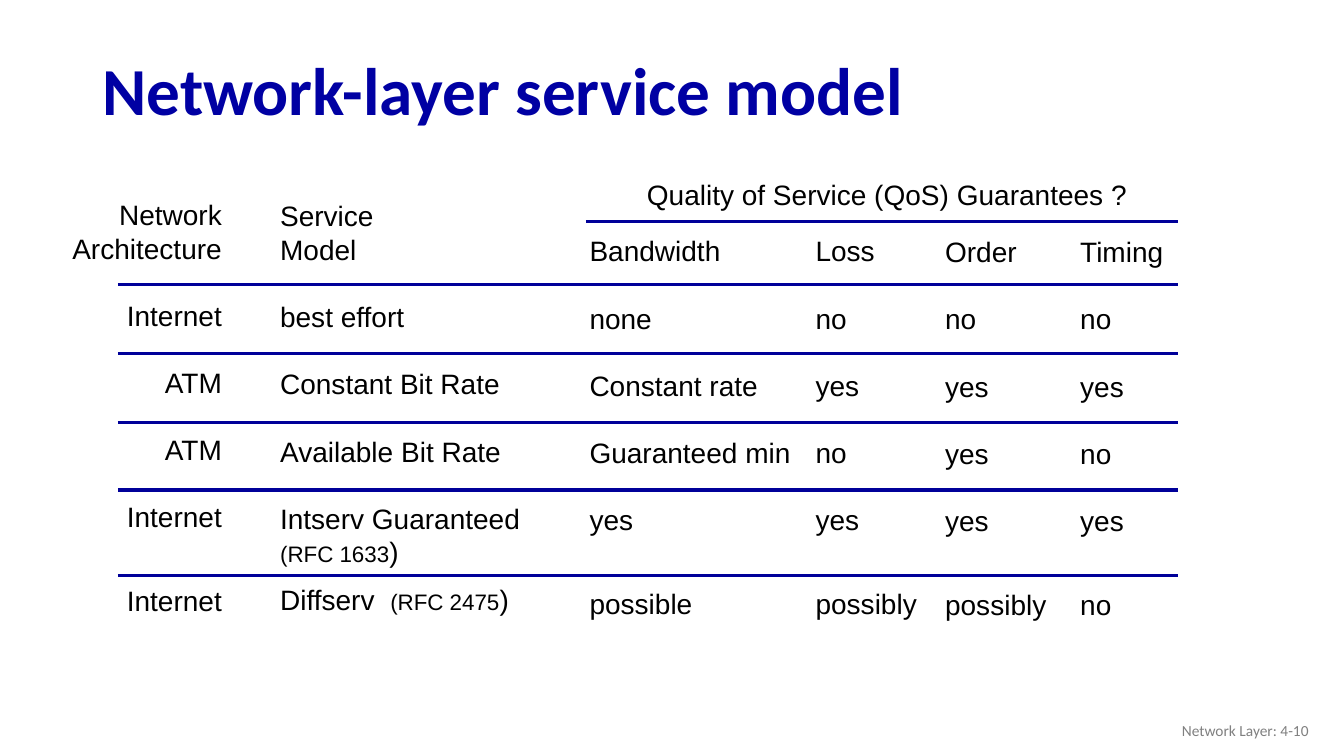
from pptx import Presentation
from pptx.dml.color import RGBColor
from pptx.enum.shapes import MSO_CONNECTOR
from pptx.enum.text import MSO_ANCHOR, PP_ALIGN
from pptx.util import Pt
from lxml.etree import SubElement
from pptx.oxml.ns import qn

COLORS = {"title": "0000A3", "rule": "000099", "text": "000000", "footer": "808080"}

deck = Presentation()
deck.slide_width, deck.slide_height = Pt(960), Pt(540)
slide = deck.slides.add_slide(deck.slide_layouts[5])


def style(paragraph, font_name, size, color, align=PP_ALIGN.LEFT):
    paragraph.alignment = align
    paragraph.font.name = font_name
    if size:
        paragraph.font.size = Pt(size)
    paragraph.font.color.rgb = RGBColor.from_string(COLORS[color])


def add_column(left, top, width, height, lines, gaps, align=PP_ALIGN.LEFT):
    """Stack lines at a 24 pt pitch; "|" splits off runs, RFC runs are smaller."""
    frame = slide.shapes.add_textbox(Pt(left), Pt(top), Pt(width), Pt(height)).text_frame
    frame.word_wrap = True
    for index, (line, gap) in enumerate(zip(lines, gaps)):
        paragraph = frame.paragraphs[0] if index == 0 else frame.add_paragraph()
        pieces = line.split("|")
        style(paragraph, "Arial", 20 if len(pieces) == 1 else None, "text", align)
        paragraph.line_spacing = Pt(24)
        paragraph.space_before = Pt(gap)
        for piece in pieces:
            run = paragraph.add_run()
            run.text = piece
            if len(pieces) > 1:
                run.font.size = Pt(16 if piece.startswith("(RFC") else 20)


# Title
title = slide.shapes.title
title.left, title.top, title.width, title.height = Pt(66), Pt(31.5), Pt(828), Pt(70.5)
title.text_frame.text = "Network-layer service model"
title.text_frame.vertical_anchor = MSO_ANCHOR.MIDDLE
heading = title.text_frame.paragraphs[0]
style(heading, "Calibri", 48, "title")
heading.font.bold = True
heading.line_spacing = 0.9

# Architecture and service model columns, with two-line headings
add_column(39.6, 137.5, 126, 310,
           ["Network", "Architecture", "Internet", "ATM", "ATM", "Internet", "Internet"],
           [0, 0, 24, 24, 24, 24, 36], PP_ALIGN.RIGHT)
add_column(193, 138.5, 208, 308,
           ["Service", "Model", "best effort", "Constant Bit Rate", "Available Bit Rate",
            "Intserv Guaranteed", "(RFC 1633|)", "Diffserv  |(RFC 2475|)"],
           [0, 0, 24, 24, 24, 24, 0, 10])

# Guarantee columns
guarantees = [
    (414, 163.5, 168, ["Bandwidth", "none", "Constant rate", "Guaranteed min", "yes", "possible"]),
    (575.5, 163.5, 92, ["Loss", "no", "yes", "no", "yes", "possibly"]),
    (668, 164, 92, ["Order", "no", "yes", "yes", "yes", "possibly"]),
    (764.5, 164, 80, ["Timing", "no", "yes", "no", "yes", "no"]),
]
for left, top, width, lines in guarantees:
    add_column(left, top, width, 286, lines, [0, 24, 24, 24, 24, 36])
add_column(455, 123, 364, 32, ["Quality of Service (QoS) Guarantees ?"], [0])

# Rules: one under the guarantees heading, then one between rows
rules = [(418.5, 158.4)] + [(84.2, y) for y in (203, 252.5, 301.5, 350, 411.3)]
for left, y in rules:
    rule = slide.shapes.add_connector(MSO_CONNECTOR.STRAIGHT, Pt(left), Pt(y), Pt(841.5), Pt(y))
    rule.line.color.rgb = RGBColor.from_string(COLORS["rule"])
    rule.line.width = Pt(2.25)
    SubElement(rule._element.spPr, qn("a:effectLst"))

# Footer
footer = slide.shapes.add_textbox(Pt(726), Pt(507.5), Pt(216), Pt(28.75)).text_frame
footer.word_wrap = True
footer.vertical_anchor = MSO_ANCHOR.MIDDLE
footer.text = "Network Layer: 4-10"
style(footer.paragraphs[0], "Calibri", 11, "footer", PP_ALIGN.RIGHT)

deck.save("out.pptx")
